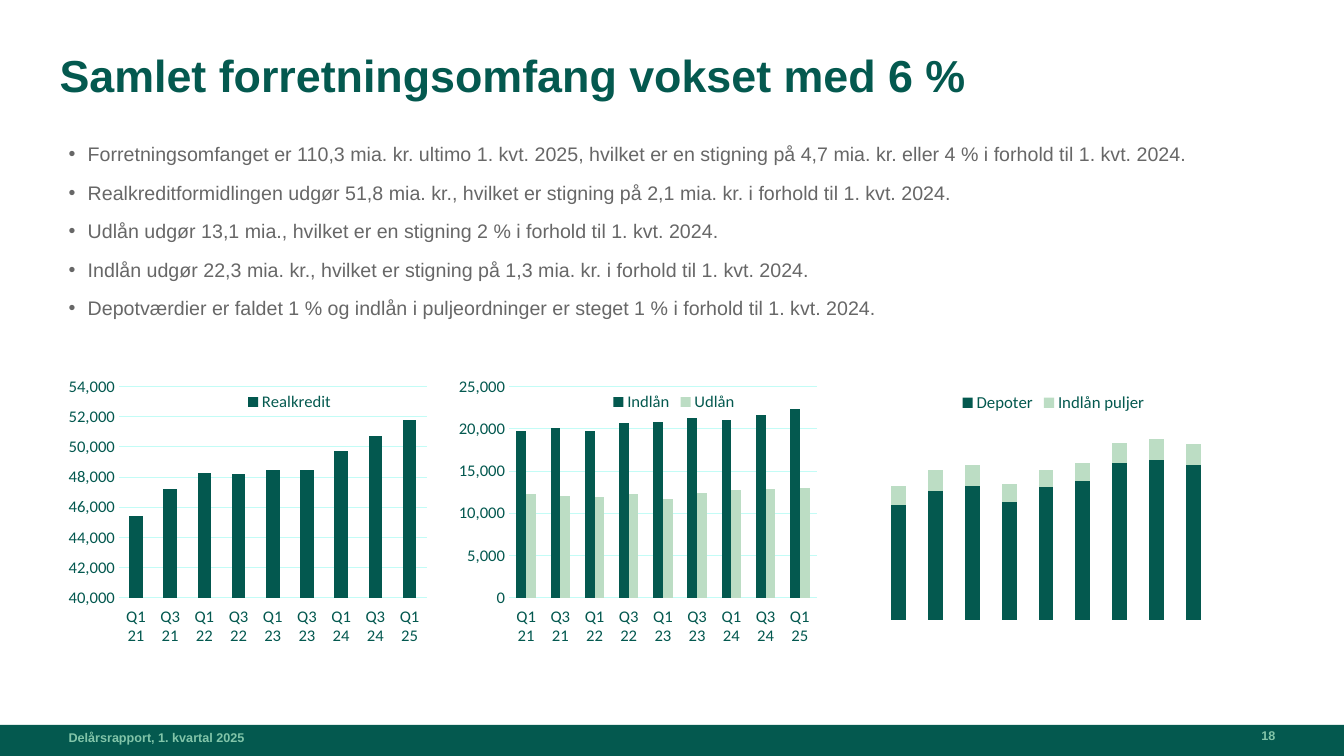
from dataclasses import dataclass

from lxml.etree import SubElement
from pptx import Presentation
from pptx.chart.data import CategoryChartData
from pptx.dml.color import RGBColor
from pptx.enum.chart import XL_CHART_TYPE, XL_LEGEND_POSITION, XL_TICK_LABEL_POSITION, XL_TICK_MARK
from pptx.enum.shapes import MSO_SHAPE
from pptx.enum.text import MSO_ANCHOR, MSO_AUTO_SIZE, PP_ALIGN
from pptx.oxml.ns import qn
from pptx.util import Inches, Pt


@dataclass(frozen=True)
class Theme:
    """Colours, fonts and type sizes of the slide."""
    green: RGBColor = RGBColor.from_string("04594F")
    axis_green: RGBColor = RGBColor.from_string("03584F")
    pale_green: RGBColor = RGBColor.from_string("BCDDC4")
    footer_text: RGBColor = RGBColor.from_string("82C5A9")
    grid: RGBColor = RGBColor.from_string("C3FCF6")
    grey: RGBColor = RGBColor.from_string("676767")
    text_font: str = "Arial"
    chart_font: str = "Calibri"
    title_size: int = 32
    body_size: int = 14
    chart_size: int = 12
    footer_size: int = 9


THEME = Theme()
QUARTERS = [f"{quarter} {year}" for year in range(21, 26) for quarter in ("Q1", "Q3")][:9]
BULLETS = [
    "Forretningsomfanget er 110,3 mia. kr. ultimo 1. kvt. 2025, hvilket er en stigning på 4,7 mia. kr. "
    "eller 4 % i forhold til 1. kvt. 2024.",
    "Realkreditformidlingen udgør 51,8 mia. kr., hvilket er stigning på 2,1 mia. kr. i forhold til 1. kvt. 2024.",
    "Udlån udgør 13,1 mia., hvilket er en stigning 2 % i forhold til 1. kvt. 2024.",
    "Indlån udgør 22,3 mia. kr., hvilket er stigning på 1,3 mia. kr. i forhold til 1. kvt. 2024.",
    "Depotværdier er faldet 1 % og indlån i puljeordninger er steget 1 % i forhold til 1. kvt. 2024.",
]


def place(shape, box):
    """Move a shape to a box given in inches."""
    shape.left, shape.top, shape.width, shape.height = map(Inches, box)


def set_font(font, size, color, name, bold=False):
    """Format a font of text or of a chart part."""
    font.size, font.name, font.bold = Pt(size), name, bold
    font.color.rgb = color


def write_text(shape, lines, *, size, color, bold=False, align=PP_ALIGN.LEFT,
               anchor=MSO_ANCHOR.TOP, line_spacing=1.0, gap=0, bullet=None):
    """Fill a shape with formatted paragraphs."""
    frame = shape.text_frame
    frame.auto_size, frame.word_wrap, frame.vertical_anchor = MSO_AUTO_SIZE.NONE, True, anchor
    frame.margin_left = frame.margin_top = frame.margin_right = frame.margin_bottom = 0
    frame.text = "\n".join(lines)
    for index, paragraph in enumerate(frame.paragraphs):
        paragraph.alignment, paragraph.line_spacing = align, line_spacing
        paragraph.space_before = Pt(gap if index else 0)
        if bullet:
            properties = paragraph._p.get_or_add_pPr()
            properties.set("marL", str(Inches(0.19)))
            properties.set("indent", str(Inches(-0.19)))
            SubElement(properties, qn("a:buFont"), typeface=THEME.text_font)
            SubElement(properties, qn("a:buChar"), char=bullet)
        for run in paragraph.runs:
            set_font(run.font, size, color, THEME.text_font, bold)


def add_heading(slide, box):
    """Place the slide title."""
    place(slide.shapes.title, box)
    write_text(slide.shapes.title, ["Samlet forretningsomfang vokset med 6 %"],
               size=THEME.title_size, color=THEME.green, bold=True, line_spacing=0.9)


def add_bullets(slide, box):
    """Place the bulleted list in the body placeholder."""
    body = slide.placeholders[1]
    place(body, box)
    write_text(body, BULLETS, size=THEME.body_size, color=THEME.grey, gap=10.7, bullet="•")


def add_footer(slide, box):
    """Draw the footer band with report name and page number."""
    left, top, width, height = box
    band = slide.shapes.add_shape(MSO_SHAPE.RECTANGLE, *map(Inches, box))
    band.shadow.inherit = False
    band.fill.solid()
    band.fill.fore_color.rgb = THEME.green
    band.line.fill.background()
    labels = [
        ("Delårsrapport, 1. kvartal 2025", 0.68, -0.08, 4.92, PP_ALIGN.LEFT),
        ("18", 11.4, -0.1, 1.25, PP_ALIGN.RIGHT),
    ]
    for text, across, down, label_width, align in labels:
        label = slide.shapes.add_textbox(*map(Inches, (left + across, top + down, label_width, 0.28)))
        write_text(label, [text], size=THEME.footer_size, color=THEME.footer_text, bold=True,
                   align=align, anchor=MSO_ANCHOR.BOTTOM)


def set_layout(element, **values):
    """Give a chart part a manual layout in fractions of the chart."""
    for old in element.findall(qn("c:layout")):
        element.remove(old)
    layout = SubElement(element, qn("c:layout"))
    manual = SubElement(layout, qn("c:manualLayout"))
    if "w" in values:
        SubElement(manual, qn("c:layoutTarget"), val="inner")
    for axis in "xy":
        SubElement(manual, qn(f"c:{axis}Mode"), val="edge")
    for name, value in values.items():
        SubElement(manual, qn(f"c:{name}"), val=str(value))
    element.insert(1 if element.tag == qn("c:legend") else 0, layout)


def style_axes(chart, limits, step):
    """Format the axes, or hide them when no step is given."""
    category_axis, value_axis = chart.category_axis, chart.value_axis
    value_axis.minimum_scale, value_axis.maximum_scale = limits
    value_axis.has_major_gridlines = step is not None
    if step is None:
        category_axis.visible = value_axis.visible = False
        return
    value_axis.major_unit = step
    value_axis.tick_labels.number_format = "#,##0"
    value_axis.tick_labels.number_format_is_linked = False
    value_axis.format.line.fill.background()
    category_axis.tick_label_position = XL_TICK_LABEL_POSITION.LOW
    for axis in (category_axis, value_axis):
        axis.major_tick_mark = axis.minor_tick_mark = XL_TICK_MARK.NONE
        set_font(axis.tick_labels.font, THEME.chart_size, THEME.axis_green, THEME.chart_font)
    for line in (category_axis.format.line, value_axis.major_gridlines.format.line):
        line.color.rgb, line.width = THEME.grid, Pt(0.75)


def add_column_chart(slide, box, series, *, limits, legend, plot_area, colors,
                     categories=QUARTERS, step=None, stacked=False):
    """Draw one column chart with its legend inside the box."""
    data = CategoryChartData(number_format="#,##0")
    data.categories = categories
    for name, values in series.items():
        data.add_series(name, values)
    kind = XL_CHART_TYPE.COLUMN_STACKED if stacked else XL_CHART_TYPE.COLUMN_CLUSTERED
    chart = slide.shapes.add_chart(kind, *map(Inches, box), data).chart
    chart.has_title = False
    set_font(chart.font, 10, THEME.green, THEME.chart_font)
    style_axes(chart, limits, step)
    plot = chart.plots[0]
    plot.gap_width, plot.overlap, plot.vary_by_categories = 150, 100 if stacked else 0, False
    for column, color in zip(plot.series, colors):
        column.format.fill.solid()
        column.format.fill.fore_color.rgb = color
    chart.has_legend = True
    chart.legend.position = XL_LEGEND_POSITION.TOP
    chart.legend.include_in_layout = False
    set_font(chart.legend.font, THEME.chart_size, THEME.green, THEME.chart_font)
    set_layout(chart.legend._element, x=legend[0], y=legend[1])
    set_layout(chart._chartSpace.chart.plotArea, **dict(zip("xywh", plot_area)))


def add_charts(slide, box):
    """Place the three charts side by side."""
    left, top, width, height = box
    pair = (THEME.green, THEME.pale_green)
    axis_plot = (0.132, 0.033, 0.866, 0.81)
    add_column_chart(
        slide, (left, top, width, height),
        {"Realkredit": (45400, 47200, 48300, 48200, 48500, 48500, 49700, 50700, 51800)},
        limits=(40000, 54000), step=2000, legend=(0.48, 0.04), plot_area=axis_plot,
        colors=(THEME.axis_green,))
    add_column_chart(
        slide, (left + 3.87, top, width, height),
        {"Indlån": (19700, 20100, 19800, 20700, 20800, 21300, 21000, 21700, 22300),
         "Udlån": (12300, 12100, 11900, 12300, 11700, 12400, 12800, 12900, 13000)},
        limits=(0, 25000), step=5000, legend=(0.41, 0.04), plot_area=axis_plot, colors=pair)
    add_column_chart(
        slide, (left + 7.78, top + 0.01, width, height),
        {"Depoter": (72, 81, 84, 74, 83, 87, 98, 100, 97),
         "Indlån puljer": (12, 13, 13, 11, 11, 11, 13, 13, 13)},
        limits=(0, 145), legend=(0.29, 0.04), plot_area=(0.076, 0.038, 0.924, 0.862),
        colors=pair, categories=[str(number) for number in range(1, 10)], stacked=True)


def main():
    """Build and save the slide."""
    presentation = Presentation()
    presentation.slide_width, presentation.slide_height = Inches(13.33), Inches(7.5)
    slide = presentation.slides.add_slide(presentation.slide_layouts[0])
    add_footer(slide, (0, 7.19, 13.33, 0.31))
    add_heading(slide, (0.59, 0.53, 11.97, 0.68))
    add_bullets(slide, (0.68, 1.41, 11.97, 1.98))
    add_charts(slide, (0.68, 3.74, 3.56, 2.67))
    presentation.save("out.pptx")


if __name__ == "__main__":
    main()
